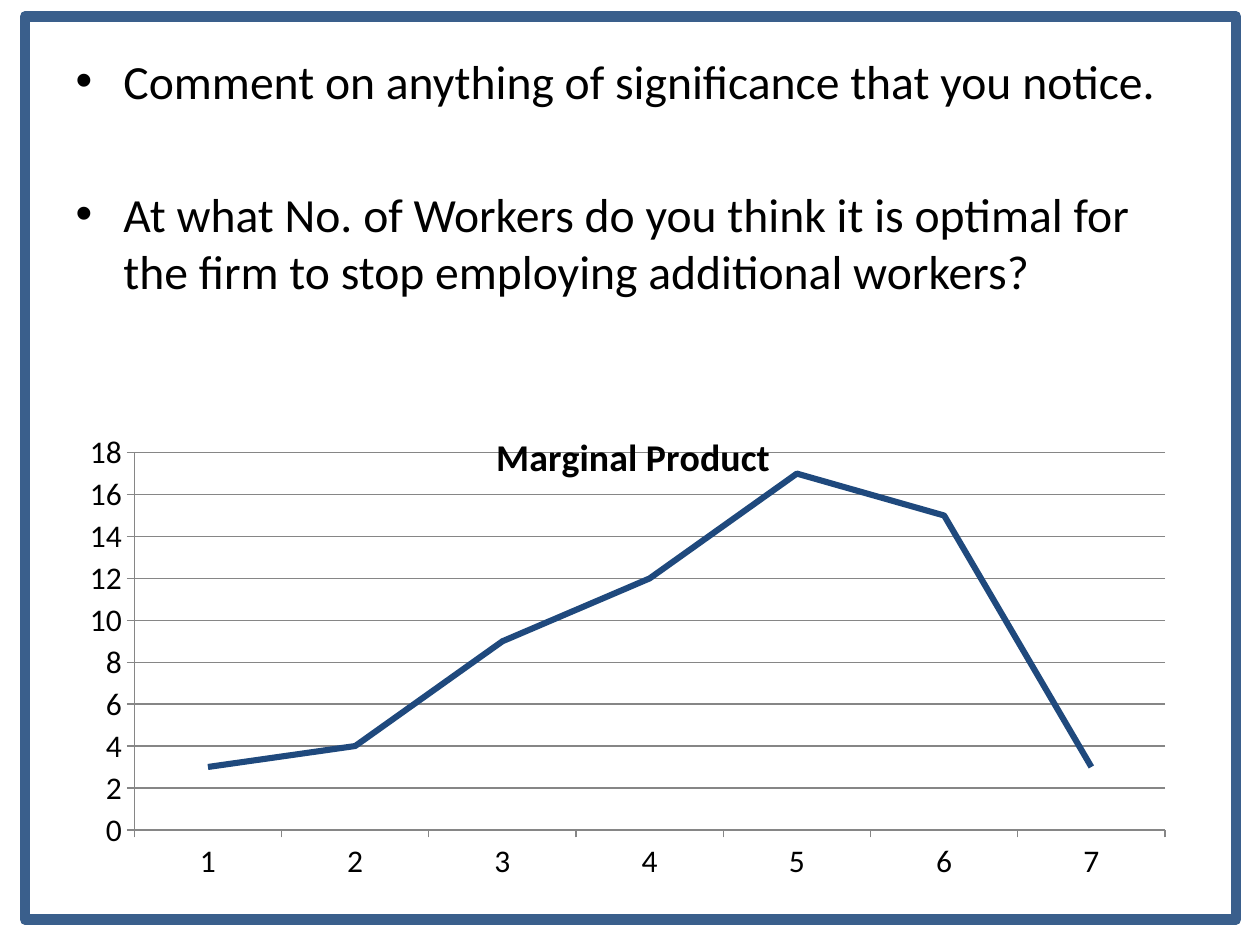
from dataclasses import dataclass

from lxml.etree import SubElement
from pptx import Presentation
from pptx.chart.data import CategoryChartData
from pptx.dml.color import RGBColor as Rgb
from pptx.enum.chart import XL_CHART_TYPE as Kind, XL_TICK_MARK as Tick
from pptx.enum.shapes import MSO_SHAPE as Shape
from pptx.enum.text import MSO_ANCHOR as Anchor, MSO_AUTO_SIZE as Fit
from pptx.oxml.ns import qn
from pptx.util import Inches, Pt


@dataclass(frozen=True)
class Theme:
    font: str = "Calibri"
    ink: str = "000000"
    frame: str = "3A5F8C"
    curve: str = "1F497D"
    grid: str = "868686"
    body: float = 27.2
    label: float = 18
    title: float = 21.6


THEME = Theme()
NAME = "Marginal Product"
OUTPUT = [3, 4, 9, 12, 17, 15, 3]
POINTS = [
    "Comment on anything of significance that you notice.",
    "At what No. of Workers do you think it is optimal for the firm "
    "to stop employing additional workers?",
]


def style(font, size, color=THEME.ink, bold=False):
    font.name, font.size, font.bold = THEME.font, Pt(size), bold
    font.color.rgb = Rgb.from_string(color)


def write(para, text, size=THEME.body, before=0, bold=False):
    para.space_before = Pt(before)
    run = para.add_run()
    run.text = text
    style(run.font, size, bold=bold)


def stroke(line, color, width):
    line.color.rgb = Rgb.from_string(color)
    line.width = Pt(width)


def place(item, box):
    item.left, item.top, item.width, item.height = map(Inches, box)


def add_frame(slide, box):
    rect = slide.shapes.add_shape(Shape.RECTANGLE, *map(Inches, box))
    rect.shadow.inherit = False
    rect.fill.background()
    stroke(rect.line, THEME.frame, 6)


def add_bullet(para, indent):
    props = para._p.get_or_add_pPr()
    props.set("marL", str(indent))
    props.set("indent", str(-indent))
    SubElement(props, qn("a:buFont")).set("typeface", "Arial")
    SubElement(props, qn("a:buChar")).set("char", "•")


def fill_list(body, box, points):
    place(body, box)
    frame = body.text_frame
    frame.word_wrap, frame.auto_size = True, Fit.NONE
    frame.vertical_anchor = Anchor.TOP
    for i, point in enumerate(points):
        para = frame.add_paragraph() if i else frame.paragraphs[0]
        write(para, point, before=43.5 if i else 5.4)
        add_bullet(para, Inches(0.38))


def set_layout(parent, after, inner=False, **spots):
    """Fix the place of a chart part, as fractions of the chart."""
    for old in parent.findall(qn("c:layout")):
        parent.remove(old)
    layout = parent.makeelement(qn("c:layout"))
    manual = SubElement(layout, qn("c:manualLayout"))
    if inner:
        SubElement(manual, qn("c:layoutTarget")).set("val", "inner")
    for key in ("x", "y"):
        SubElement(manual, qn(f"c:{key}Mode")).set("val", "edge")
    for key, value in spots.items():
        SubElement(manual, qn(f"c:{key}")).set("val", str(value))
    if after is None:
        parent.insert(0, layout)
    else:
        after.addnext(layout)


def add_title(chart):
    chart.has_title = True
    title = chart.chart_title
    write(title.text_frame.paragraphs[0], NAME, size=THEME.title, bold=True)
    node = title._element
    set_layout(node, node.find(qn("c:tx")), x=0.38, y=0.06)
    title.include_in_layout = True
    over = node.find(qn("c:overlay"))
    if over is None:
        over = node.makeelement(qn("c:overlay"))
        node.find(qn("c:layout")).addnext(over)
    over.set("val", "1")


def add_graph(slide, box):
    data = CategoryChartData()
    data.categories = [str(n + 1) for n in range(len(OUTPUT))]
    data.add_series(NAME, OUTPUT)
    chart = slide.shapes.add_chart(Kind.LINE, *map(Inches, box), data).chart
    chart.has_legend = False
    style(chart.font, THEME.label)
    add_title(chart)

    plot = chart.plots[0]
    plot.vary_by_categories = False
    series = plot.series[0]
    series.smooth = False
    stroke(series.format.line, THEME.curve, 3.5)

    value = chart.value_axis
    value.minimum_scale, value.maximum_scale, value.major_unit = 0, 18, 2
    value.has_major_gridlines = True
    stroke(value.major_gridlines.format.line, THEME.grid, 0.75)
    for axis in (chart.category_axis, value):
        axis.major_tick_mark = Tick.OUTSIDE
        axis.minor_tick_mark = Tick.NONE
        stroke(axis.format.line, THEME.grid, 0.75)
        style(axis.tick_labels.font, THEME.label)

    area = chart._chartSpace.chart.plotArea
    set_layout(area, None, inner=True, x=0.07, y=0.12, w=0.9, h=0.76)


def build():
    deck = Presentation()
    deck.slide_width, deck.slide_height = Inches(10), Inches(7.5)
    slide = deck.slides.add_slide(deck.slide_layouts[1])
    head = slide.shapes.title._element
    head.getparent().remove(head)
    add_frame(slide, (0.2, 0.13, 9.61, 7.17))
    fill_list(slide.placeholders[1], (0.5, 0.36, 9, 2.6), POINTS)
    add_graph(slide, (0.43, 3.12, 9.09, 3.94))
    deck.save("out.pptx")


if __name__ == "__main__":
    build()
